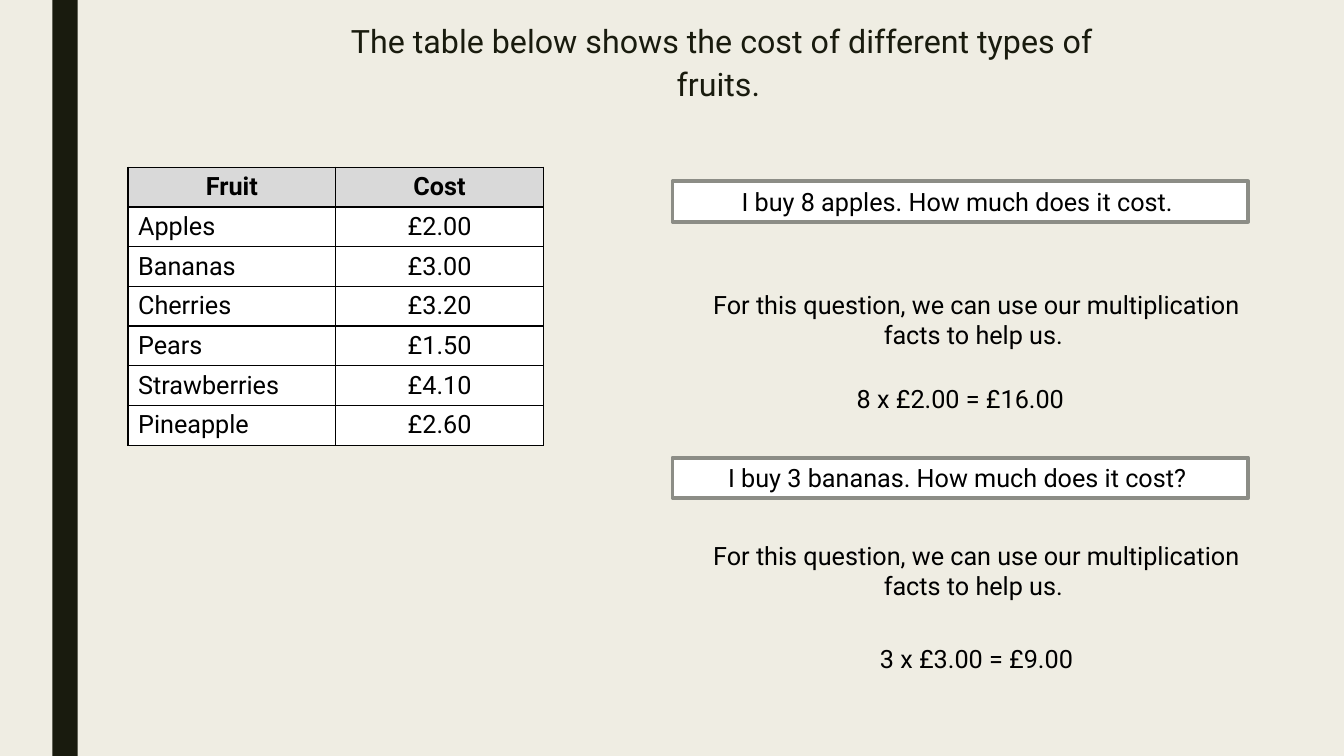
from lxml import etree
from pptx import Presentation
from pptx.dml.color import RGBColor
from pptx.enum.shapes import MSO_SHAPE
from pptx.enum.text import MSO_ANCHOR, MSO_AUTO_SIZE, PP_ALIGN
from pptx.oxml.ns import qn
from pptx.util import Inches, Pt

RECTANGLE = MSO_SHAPE.RECTANGLE
MIDDLE, TOP = MSO_ANCHOR.MIDDLE, MSO_ANCHOR.TOP
CENTER, LEFT = PP_ALIGN.CENTER, PP_ALIGN.LEFT
FIT_SHAPE, NO_FIT = MSO_AUTO_SIZE.SHAPE_TO_FIT_TEXT, MSO_AUTO_SIZE.NONE

FONT = "Roboto"
COLORS = {
    "background": "EFEDE3",
    "dark": "191B0E",
    "text": "000000",
    "white": "FFFFFF",
    "header": "D9D9D9",
    "border": "000000",
    "outline": "8C8D86",
}

PRICES = [
    ("Fruit", "Cost"),
    ("Apples", "£2.00"),
    ("Bananas", "£3.00"),
    ("Cherries", "£3.20"),
    ("Pears", "£1.50"),
    ("Strawberries", "£4.10"),
    ("Pineapple", "£2.60"),
]
HINT = "For this question, we can use our multiplication facts to help us. "
# Each entry: question and top, hint top, working, its left and top
PROBLEMS = [
    ("I buy 8 apples. How much does it cost. ", 1.8, 2.82,
     "8 x £2.00 = £16.00", 6.67, 3.75),
    ("I buy 3 bananas. How much does it cost? ", 4.54, 5.31,
     "3 x £3.00 = £9.00", 6.83, 6.33),
]
QUESTION_LEFT, HINT_LEFT = 6.67, 6.83
PANEL_WIDTH, LINE_HEIGHT, HINT_HEIGHT = 5.71, 0.4, 0.71
COLUMN_WIDTH, ROW_HEIGHT = 2.06, 0.39


def color(name):
    return RGBColor.from_string(COLORS[name])


def fill_solid(fill, name):
    fill.solid()
    fill.fore_color.rgb = color(name)


def write(frame, text, size=18, ink="text", align=CENTER, bold=False):
    paragraph = frame.paragraphs[0]
    paragraph.alignment = align
    run = paragraph.add_run()
    run.text = text
    font_format = {"name": FONT, "size": Pt(size), "bold": bold}
    for attribute, value in font_format.items():
        setattr(run.font, attribute, value)
    run.font.color.rgb = color(ink)
    return paragraph


def add_side_bar(slide):
    bar = slide.shapes.add_shape(
        RECTANGLE, Inches(0.52), 0, Inches(0.25), Inches(7.5))
    bar.shadow.inherit = False
    fill_solid(bar.fill, "dark")
    bar.line.fill.background()


def set_title(slide, text):
    title = slide.shapes.title
    place = {"left": 2.99, "top": 0.29, "width": 8.35, "height": 0.61}
    for attribute, value in place.items():
        setattr(title, attribute, Inches(value))
    frame = title.text_frame
    frame.word_wrap = True
    frame.auto_size = NO_FIT
    frame.vertical_anchor = MIDDLE
    write(frame, text, size=23, ink="dark").line_spacing = 1.12


def add_borders(cell):
    """Draw a thin line on all four sides; borders precede the cell fill."""
    properties = cell._tc.get_or_add_tcPr()
    for index, side in enumerate(("lnL", "lnR", "lnT", "lnB")):
        border = etree.Element(qn(f"a:{side}"), w=str(Pt(1)))
        solid = etree.SubElement(border, qn("a:solidFill"))
        etree.SubElement(solid, qn("a:srgbClr"), val=COLORS["border"])
        properties.insert(index, border)


def add_price_table(slide):
    rows, columns = len(PRICES), len(PRICES[0])
    table = slide.shapes.add_table(
        rows, columns, Inches(1.27), Inches(1.66),
        Inches(COLUMN_WIDTH * columns), Inches(ROW_HEIGHT * rows)).table
    for row_index, values in enumerate(PRICES):
        is_header = row_index == 0
        for column_index, value in enumerate(values):
            is_name = column_index == 0 and not is_header
            cell = table.cell(row_index, column_index)
            cell.vertical_anchor = TOP if is_name else MIDDLE
            fill_solid(cell.fill, "header" if is_header else "white")
            add_borders(cell)
            write(cell.text_frame, value, bold=is_header,
                  align=LEFT if is_name else CENTER)


def add_question(slide, text, top):
    box = slide.shapes.add_shape(
        RECTANGLE, Inches(QUESTION_LEFT), Inches(top),
        Inches(PANEL_WIDTH), Inches(LINE_HEIGHT))
    box.shadow.inherit = False
    fill_solid(box.fill, "white")
    box.line.color.rgb = color("outline")
    box.line.width = Pt(2.75)
    fill_frame(box.text_frame, text)


def add_note(slide, text, left, top, height):
    note = slide.shapes.add_textbox(
        Inches(left), Inches(top), Inches(PANEL_WIDTH), Inches(height))
    fill_frame(note.text_frame, text)


def fill_frame(frame, text):
    frame.word_wrap = True
    frame.auto_size = FIT_SHAPE
    frame.vertical_anchor = TOP
    write(frame, text)


def main():
    presentation = Presentation()
    presentation.slide_width = Inches(13.33)
    presentation.slide_height = Inches(7.5)
    title_only = presentation.slide_layouts[5]
    slide = presentation.slides.add_slide(title_only)
    fill_solid(slide.background.fill, "background")

    add_side_bar(slide)
    set_title(slide, "The table below shows the cost of different types of fruits. ")
    add_price_table(slide)
    for question, question_top, hint_top, working, left, top in PROBLEMS:
        add_question(slide, question, question_top)
        add_note(slide, HINT, HINT_LEFT, hint_top, HINT_HEIGHT)
        add_note(slide, working, left, top, LINE_HEIGHT)

    presentation.save("out.pptx")


if __name__ == "__main__":
    main()
